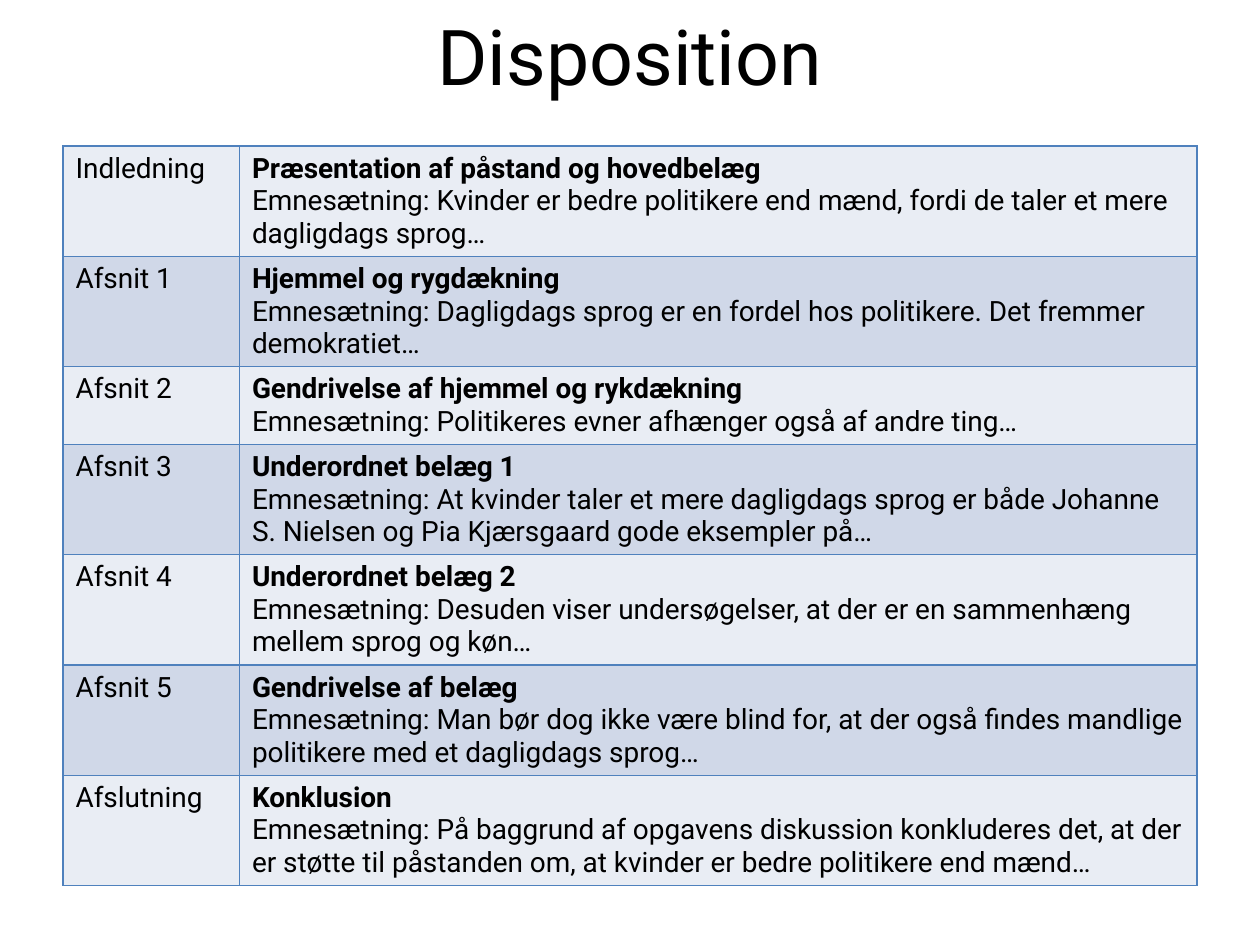
from dataclasses import dataclass

from lxml.etree import SubElement
from pptx import Presentation
from pptx.dml.color import RGBColor as Color
from pptx.enum.text import MSO_ANCHOR as Anchor, MSO_AUTO_SIZE as AutoSize, PP_ALIGN as Align
from pptx.oxml.ns import qn
from pptx.util import Inches, Pt


@dataclass(frozen=True)
class Theme:
    font: str = "Roboto"
    title_size: int = 44
    table_size: int = 16
    ink: str = "000000"
    border: str = "4F81BD"
    border_width: float = 1
    bands: tuple = ("E9EDF4", "D0D8E8")


SECTIONS = [
    ("Indledning", "Præsentation af påstand og hovedbelæg",
     "Kvinder er bedre politikere end mænd, fordi de taler et mere dagligdags sprog…"),
    ("Afsnit 1", "Hjemmel og rygdækning",
     "Dagligdags sprog er en fordel hos politikere. Det fremmer demokratiet…"),
    ("Afsnit 2", "Gendrivelse af hjemmel og rykdækning",
     "Politikeres evner afhænger også af andre ting…"),
    ("Afsnit 3", "Underordnet belæg 1",
     "At kvinder taler et mere dagligdags sprog er både Johanne S. Nielsen "
     "og Pia Kjærsgaard gode eksempler på…"),
    ("Afsnit 4", "Underordnet belæg 2",
     "Desuden viser undersøgelser, at der er en sammenhæng mellem sprog og køn…"),
    ("Afsnit 5", "Gendrivelse af belæg",
     "Man bør dog ikke være blind for, at der også findes mandlige politikere "
     "med et dagligdags sprog…"),
    ("Afslutning", "Konklusion",
     "På baggrund af opgavens diskussion konkluderes det, at der er støtte til "
     "påstanden om, at kvinder er bedre politikere end mænd…"),
]


class PageBuilder:
    """Places styled elements on one page; lengths are in inches."""

    def __init__(self, deck, theme):
        self.theme = theme
        self.page = deck.slides.add_slide(deck.slide_layouts.get_by_name("Title Only"))

    def add_span(self, para, text, size, bold=False):
        span = para.add_run()
        span.text = text
        formats = {"name": self.theme.font, "size": Pt(size), "bold": bold}
        for name, value in formats.items():
            setattr(span.font, name, value)
        span.font.color.rgb = Color.from_string(self.theme.ink)

    def title(self, text, left, top, width, height):
        box = self.page.shapes.title
        place = {"left": left, "top": top, "width": width, "height": height}
        for name, value in place.items():
            setattr(box, name, Inches(value))
        frame = box.text_frame
        formats = {"auto_size": AutoSize.NONE, "vertical_anchor": Anchor.MIDDLE,
                   "word_wrap": True}
        for name, value in formats.items():
            setattr(frame, name, value)
        para = frame.paragraphs[0]
        para.alignment = Align.CENTER
        self.add_span(para, text, self.theme.title_size)

    def outline_cell(self, cell):
        properties = cell._tc.get_or_add_tcPr()
        for side in ("lnL", "lnR", "lnT", "lnB"):
            line = SubElement(properties, qn(f"a:{side}"),
                              w=str(Pt(self.theme.border_width)))
            fill = SubElement(line, qn("a:solidFill"))
            SubElement(fill, qn("a:srgbClr"), val=self.theme.border)

    def fill_cell(self, cell, lines, color):
        """Put (text, bold) lines, one paragraph each, in a bordered cell."""
        self.outline_cell(cell)
        cell.fill.solid()
        cell.fill.fore_color.rgb = Color.from_string(color)
        frame = cell.text_frame
        for index, (text, bold) in enumerate(lines):
            para = frame.add_paragraph() if index else frame.paragraphs[0]
            self.add_span(para, text, self.theme.table_size, bold)

    def section_table(self, sections, left, top, columns, row_height, height):
        """Rows start at row_height and grow to fit their text."""
        holder = self.page.shapes.add_table(
            len(sections), len(columns), Inches(left), Inches(top),
            Inches(sum(columns)), Inches(height))
        table = holder.table
        table.first_row = table.horz_banding = False
        for column, width in zip(table.columns, columns):
            column.width = Inches(width)
        for index, (row, (label, heading, topic)) in enumerate(zip(table.rows, sections)):
            row.height = Inches(row_height)
            color = self.theme.bands[index % len(self.theme.bands)]
            contents = ([(label, False)],
                        [(heading, True), (f"Emnesætning: {topic}", False)])
            for cell, lines in zip(row.cells, contents):
                self.fill_cell(cell, lines, color)
        holder.height = Inches(height)


def main():
    deck = Presentation()
    deck.slide_width, deck.slide_height = Inches(10), Inches(7.5)
    builder = PageBuilder(deck, Theme())
    margin = 0.5
    builder.title("Disposition", margin, 0, 10 - 2 * margin, 0.87)
    builder.section_table(SECTIONS, margin, 1.16, (1.4, 7.6), 0.41, 6.03)
    deck.save("out.pptx")


if __name__ == "__main__":
    main()
